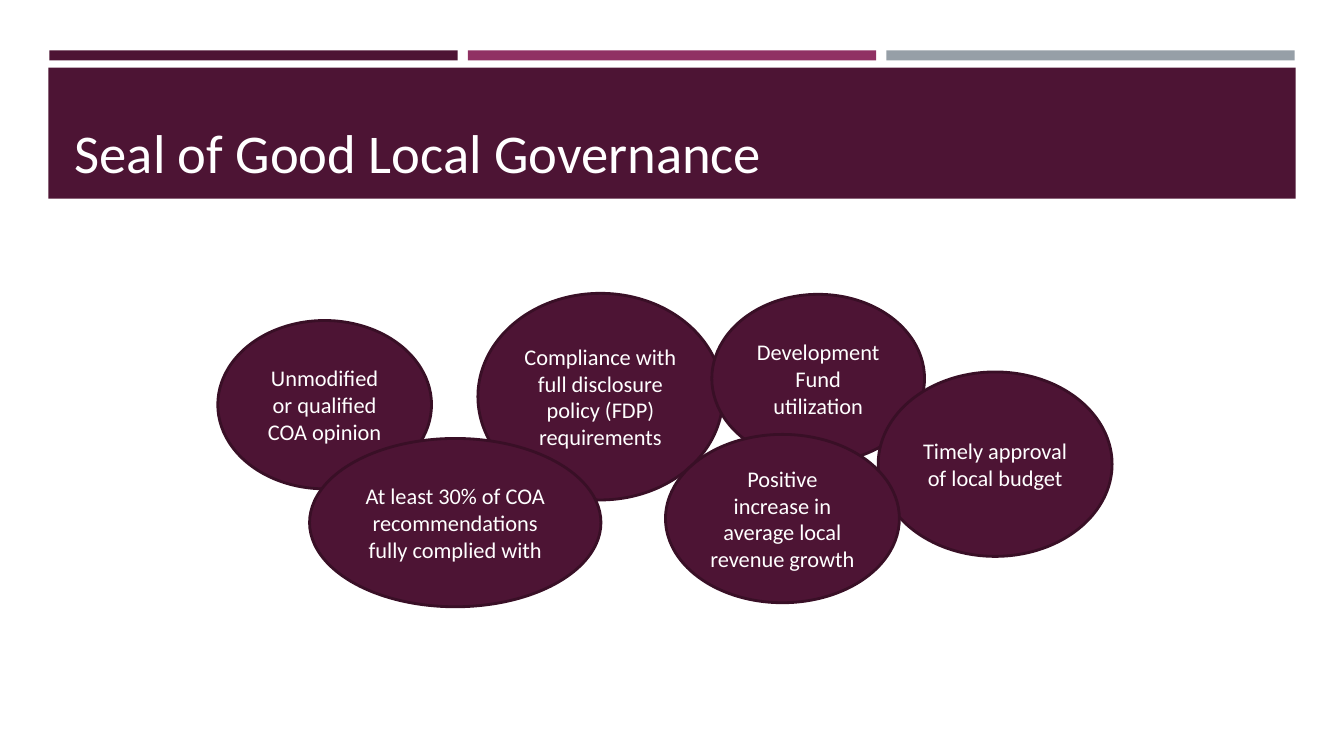
import pptx
import pptx.dml.color
import pptx.enum.shapes
import pptx.enum.text
import pptx.util

Inches = pptx.util.Inches
Pt = pptx.util.Pt
SHAPES = pptx.enum.shapes.MSO_SHAPE
ALIGN = pptx.enum.text.PP_ALIGN
ANCHOR = pptx.enum.text.MSO_ANCHOR

TITLE = "Seal of Good Local Governance"
PLUM, DARK_PLUM, WHITE = "4D1434", "390F26", "FFFFFF"
STRIPE_COLORS = [PLUM, "903163", "969FA7"]
STRIPE_LEFT, STRIPE_WIDTH, STRIPE_PITCH = 0.49, 4.05, 4.15
TITLE_BAND = (0.48, 0.67, 12.37, 1.3)
TITLE_BOX = (0.64, 0.77, 12.06, 1.11)

# Criterion and its ellipse: left, top, width, height in inches, back to front
CRITERIA = [
    ("Unmodified or qualified COA opinion", (2.16, 3.18, 2.12, 1.67)),
    ("Compliance with full disclosure policy (FDP) requirements", (4.74, 2.91, 2.43, 2.05)),
    ("Development Fund utilization", (7.06, 2.92, 2.11, 1.67)),
    ("Timely approval of local budget", (8.71, 3.69, 2.32, 1.83)),
    ("Positive increase in average local revenue growth", (6.6, 4.31, 2.32, 1.67)),
    ("At least 30% of COA recommendations fully complied with", (3.07, 4.35, 2.89, 1.67)),
]


def rgb(value):
    return pptx.dml.color.RGBColor.from_string(value)


def add_filled(slide, kind, box, fill, line=None):
    shape = slide.shapes.add_shape(kind, *map(Inches, box))
    shape.shadow.inherit = False
    shape.fill.solid()
    shape.fill.fore_color.rgb = rgb(fill)
    if line:
        shape.line.color.rgb = rgb(line)
        shape.line.width = Pt(2)
    else:
        shape.line.fill.background()
    return shape


def write_text(shape, text, size, alignment, anchor):
    frame = shape.text_frame
    frame.text = text
    frame_format = {
        "word_wrap": True,
        "auto_size": pptx.enum.text.MSO_AUTO_SIZE.NONE,
        "vertical_anchor": anchor,
        "margin_left": Inches(0.1),
        "margin_right": Inches(0.1),
        "margin_top": Inches(0.05),
        "margin_bottom": Inches(0.05),
    }
    for name, value in frame_format.items():
        setattr(frame, name, value)
    paragraph = frame.paragraphs[0]
    paragraph.alignment = alignment
    font = paragraph.runs[0].font
    for name, value in {"name": "Calibri", "size": Pt(size)}.items():
        setattr(font, name, value)
    font.color.rgb = rgb(WHITE)


def add_header(slide):
    for index, color in enumerate(STRIPE_COLORS):
        left = STRIPE_LEFT + index * STRIPE_PITCH
        add_filled(slide, SHAPES.RECTANGLE, (left, 0.5, STRIPE_WIDTH, 0.1), color)
    band = add_filled(slide, SHAPES.RECTANGLE, TITLE_BAND, PLUM)

    title = slide.shapes.title
    title.left, title.top, title.width, title.height = map(Inches, TITLE_BOX)
    write_text(title, TITLE, 39, ALIGN.LEFT, ANCHOR.BOTTOM)
    band._element.addnext(title._element)  # bring the title in front of its band


def main():
    presentation = pptx.Presentation()
    presentation.slide_width = Inches(13.33)
    presentation.slide_height = Inches(7.5)
    slide = presentation.slides.add_slide(presentation.slide_layouts[5])
    add_header(slide)
    for criterion, box in CRITERIA:
        ellipse = add_filled(slide, SHAPES.OVAL, box, PLUM, DARK_PLUM)
        write_text(ellipse, criterion, 16, ALIGN.CENTER, ANCHOR.MIDDLE)
    presentation.save("out.pptx")


if __name__ == "__main__":
    main()
